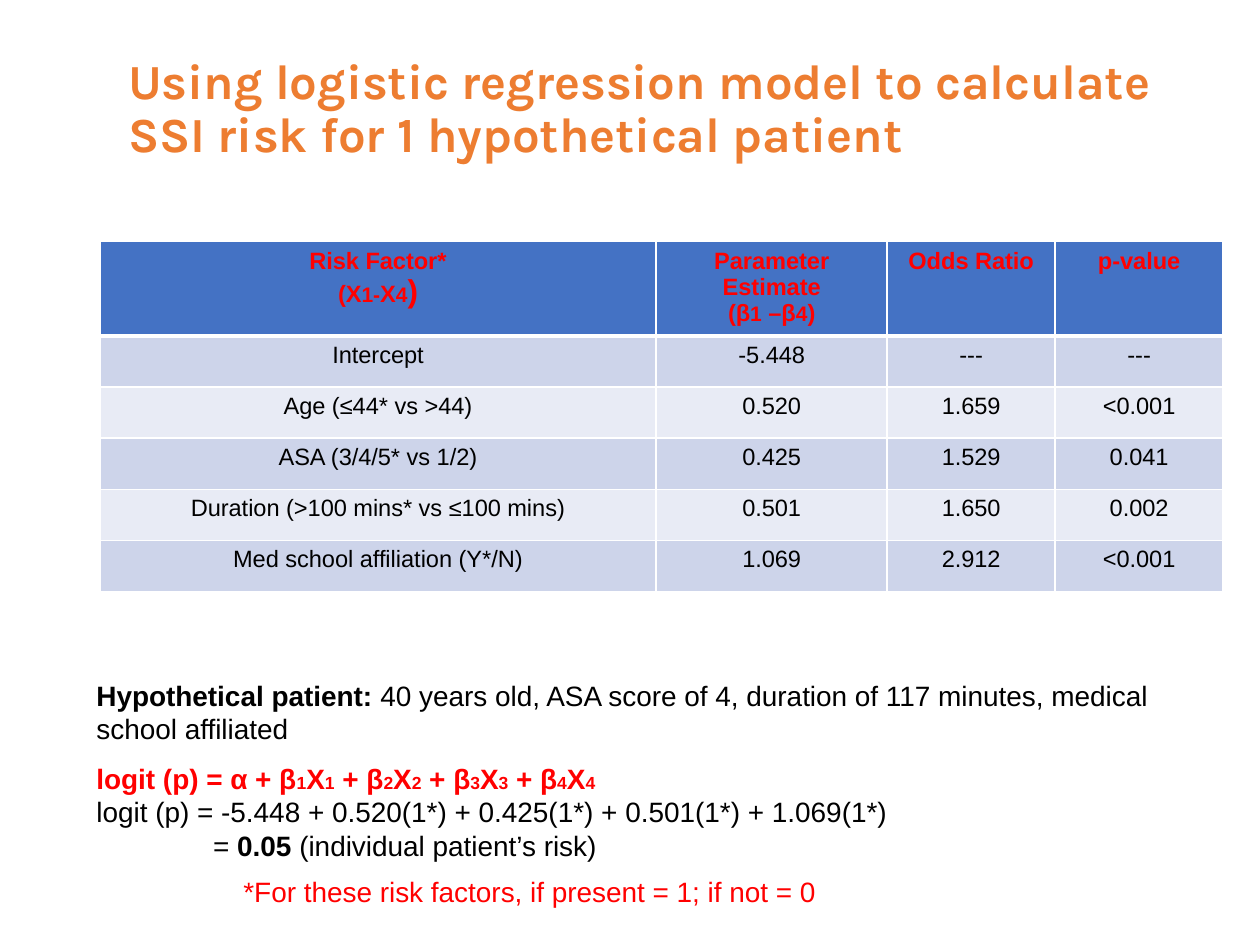
import pptx
import pptx.dml.color
import pptx.enum.text
import pptx.oxml
import pptx.oxml.ns
import pptx.util

Pt = pptx.util.Pt
Align = pptx.enum.text.PP_ALIGN
COLORS = {
    "title": "ED7D31", "accent": "FF0000", "text": "000000", "header": "4472C4",
    "band_dark": "CDD4EA", "band_light": "E8EBF5", "border": "FFFFFF",
}


def rgb(name):
    return pptx.dml.color.RGBColor.from_string(COLORS[name])


def add_span(para, text, size=16, bold=False, color="text", font="Arial"):
    span = para.add_run()
    span.text = text
    span.font.size = Pt(size)
    span.font.bold = bold
    span.font.name = font
    span.font.color.rgb = rgb(color)


def fill_frame(frame, paras, align=Align.LEFT, **style):
    """Write paragraphs, each a list of (text, format) spans; style is the default format."""
    for index, spans in enumerate(paras):
        para = frame.paragraphs[0] if index == 0 else frame.add_paragraph()
        para.alignment = align
        for text, changes in spans:
            add_span(para, text, **{**style, **changes})


class Page:
    def __init__(self, deck):
        self.slide = deck.slides.add_slide(deck.slide_layouts[5])

    def title(self, text, left, top, width, height):
        box = self.slide.shapes.title
        box.left, box.top, box.width, box.height = map(Pt, (left, top, width, height))
        frame = box.text_frame
        frame.word_wrap = True
        frame.auto_size = pptx.enum.text.MSO_AUTO_SIZE.NONE
        frame.vertical_anchor = pptx.enum.text.MSO_ANCHOR.MIDDLE
        fill_frame(frame, [[(text, {})]], size=28, bold=True, color="title", font="Karla")
        frame.paragraphs[0].line_spacing = 0.9

    def text(self, paras, left, top, width, height, **style):
        box = self.slide.shapes.add_textbox(*map(Pt, (left, top, width, height)))
        box.text_frame.word_wrap = True
        fill_frame(box.text_frame, paras, **style)
        return box.text_frame.paragraphs

    def border(self, cell, side, width):
        namespace = pptx.oxml.ns.nsdecls("a")
        cell._tc.get_or_add_tcPr().append(pptx.oxml.parse_xml(
            f'<a:ln{side} {namespace} w="{Pt(width)}"><a:solidFill>'
            f'<a:srgbClr val="{COLORS["border"]}"/></a:solidFill></a:ln{side}>'))

    def table(self, header, rows, left, top, widths, heights):
        grid = self.slide.shapes.add_table(
            len(heights), len(widths), Pt(left), Pt(top), Pt(sum(widths)), Pt(sum(heights))).table
        for column, width in zip(grid.columns, widths):
            column.width = Pt(width)
        for row, height in zip(grid.rows, heights):
            row.height = Pt(height)
        body = [[[[(text, {})]] for text in row] for row in rows]
        for r, row in enumerate([header] + body):
            for c, paras in enumerate(row):
                cell = grid.cell(r, c)
                for side in "LRTB":
                    at_header = (r, side) in ((0, "B"), (1, "T"))
                    self.border(cell, side, 3 if at_header else 1)
                cell.fill.solid()
                band = "band_dark" if r % 2 else "band_light"
                cell.fill.fore_color.rgb = rgb(band if r else "header")
                fill_frame(cell.text_frame, paras, align=Align.CENTER, size=13.5,
                           bold=r == 0, color="text" if r else "accent")


def main():
    deck = pptx.Presentation()
    deck.slide_width, deck.slide_height = Pt(720), Pt(540)
    page = Page(deck)
    page.title("Using logistic regression model to calculate SSI risk for 1 hypothetical patient",
               66, 18, 642, 90)

    small = {"size": 12}
    header = [
        [[("Risk Factor*", {})],
         [("(X", {}), ("1-", small), ("X", {}), ("4", small), (")", {"size": 18})]],
        [[("Parameter Estimate", {})],
         [("(β", {}), ("1", small), (" –β", {}), ("4", small), (")", {})]],
        [[("Odds Ratio", {})]],
        [[("p-value", {})]],
    ]
    rows = [
        ("Intercept", "-5.448", "---", "---"),
        ("Age (≤44* vs >44)", "0.520", "1.659", "<0.001"),
        ("ASA (3/4/5* vs 1/2)", "0.425", "1.529", "0.041"),
        ("Duration (>100 mins* vs ≤100 mins)", "0.501", "1.650", "0.002"),
        ("Med school affiliation (Y*/N)", "1.069", "2.912", "<0.001"),
    ]
    page.table(header, rows, 57, 138, (318, 132, 96, 96), [54] + [29.2] * len(rows))

    bold, formula, index = {"bold": True}, {"bold": True, "color": "accent"}, {"size": 10}
    model = [("logit (p) = α", formula)]
    for number in "1234":
        subscript = (number, {**formula, **index})
        model += [(" + β", formula), subscript, ("X", formula), subscript]
    paras = page.text([
        [("Hypothetical patient: ", bold),
         ("40 years old, ASA score of 4, duration of 117 minutes, medical school affiliated", {})],
        model,
        [("logit (p) = -5.448 + 0.520(1*) + 0.425(1*) + 0.501(1*) + 1.069(1*)", {})],
        [("= ", {}), ("0.05", bold), (" (individual patient’s risk)", {})],
    ], 48, 384, 630, 114)
    paras[1].space_before = Pt(9.2)
    paras[3]._p.get_or_add_pPr().set("marL", str(Pt(66.7)))

    page.text([[("*For these risk factors, if present = 1; if not = 0", {})]],
              132, 496, 402, 26.6, color="accent")
    deck.save("out.pptx")


if __name__ == "__main__":
    main()
